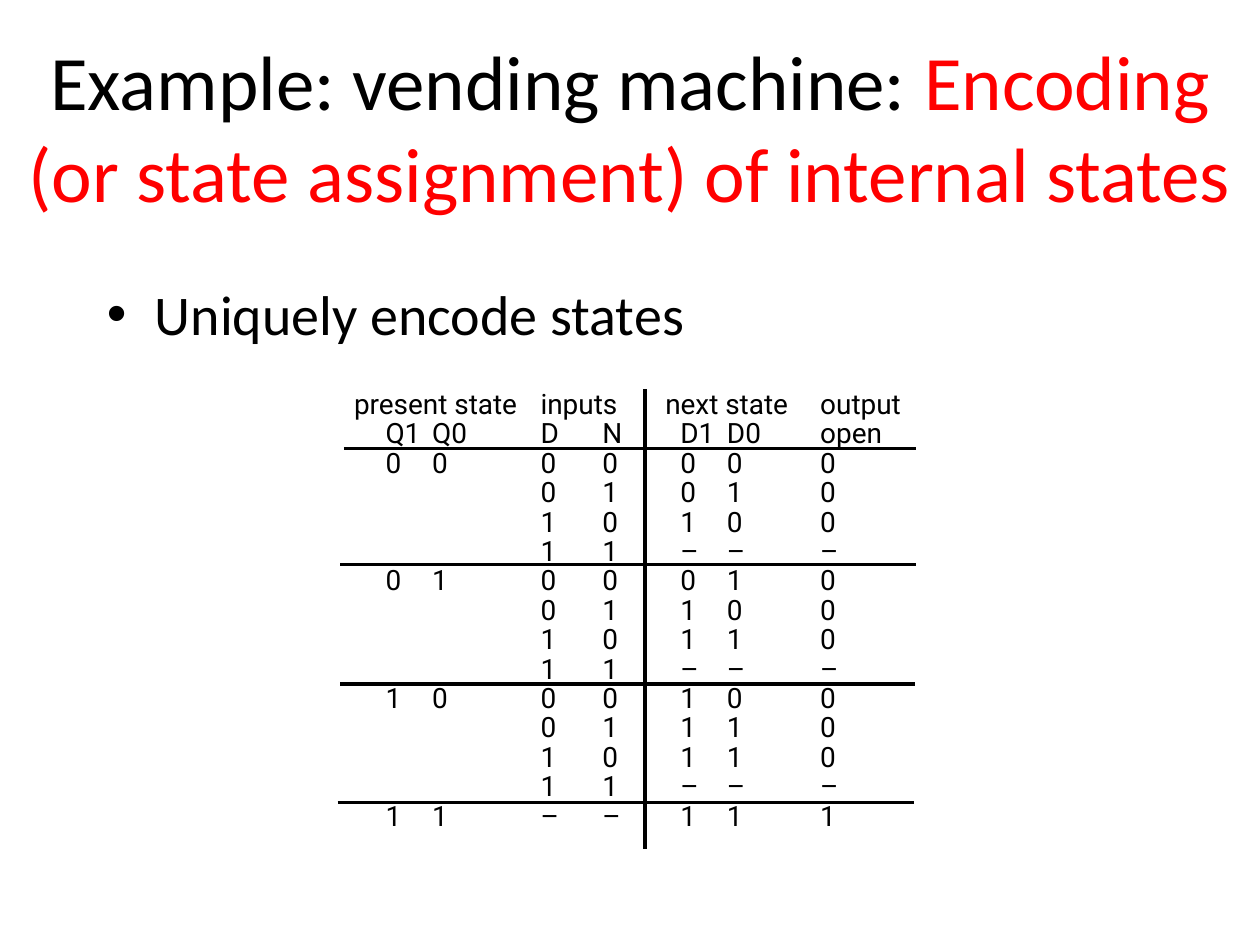
from typing import NamedTuple, Optional, Sequence

from lxml import etree
from pptx import Presentation
from pptx import util as u
from pptx.dml.color import RGBColor
from pptx.enum import shapes, text
from pptx.oxml import ns

PX = 9144  # EMU per px, 100 px to the inch
BLACK = RGBColor(0, 0, 0)
RED = RGBColor(255, 0, 0)

COLUMN_TABS = (25, 62, 148, 197, 247, 259, 296, 370)


class Box(NamedTuple):
    left: int
    top: int
    width: int
    height: int


class Span(NamedTuple):
    words: str
    color: RGBColor = BLACK


class Rule(NamedTuple):
    x1: int
    y1: int
    x2: int
    y2: int


class StateGroup(NamedTuple):
    """A present state and its rows of inputs, next state and output."""
    present: str
    transitions: Sequence[str]


HEADINGS = ["present state\tinputs\tnext state\toutput",
            "\tQ1\tQ0\tD\tN\t\tD1\tD0\topen"]
GROUPS = [
    StateGroup("00", ["00000", "01010", "10100", "11–––"]),
    StateGroup("01", ["00010", "01100", "10110", "11–––"]),
    StateGroup("10", ["00100", "01110", "10110", "11–––"]),
    StateGroup("11", ["––111"]),
]
RULES = [
    Rule(273, 356, 727, 356),
    Rule(270, 448, 727, 448),
    Rule(270, 543, 726, 543),
    Rule(268, 637, 725, 637),
    Rule(512, 309, 512, 674),
]


def px(length: int) -> u.Emu:
    return u.Emu(length * PX)


def table_lines() -> list[str]:
    lines = list(HEADINGS)
    for group in GROUPS:
        for index, values in enumerate(group.transitions):
            present = group.present if index == 0 else ("", "")
            cells = ["", *present, *values[:2], "", *values[2:]]
            lines.append("\t".join(cells))
    return lines


def write(slide, box: Box, paragraphs: Sequence[Sequence[Span]], *,
          font: str = "Calibri", size: int = 32,
          align=text.PP_ALIGN.LEFT, anchor=text.MSO_ANCHOR.TOP,
          insets: tuple[int, int] = (10, 5), leading: Optional[float] = None,
          bullet: str = "", indent: int = 0, tabs: Sequence[int] = ()) -> None:
    frame = slide.shapes.add_textbox(*map(px, box)).text_frame
    frame.word_wrap = True
    frame.vertical_anchor = anchor
    frame.margin_left = frame.margin_right = px(insets[0])
    frame.margin_top = frame.margin_bottom = px(insets[1])
    for index, spans in enumerate(paragraphs):
        paragraph = frame.add_paragraph() if index else frame.paragraphs[0]
        paragraph.alignment = align
        if leading:
            paragraph.line_spacing = u.Pt(leading)
        properties = paragraph._p.get_or_add_pPr()
        if bullet:
            properties.set("marL", str(px(indent)))
            properties.set("indent", str(-px(indent)))
            etree.SubElement(properties, ns.qn("a:buFont"), typeface="Arial")
            etree.SubElement(properties, ns.qn("a:buChar"), char=bullet)
        if tabs:
            stops = etree.SubElement(properties, ns.qn("a:tabLst"))
            for stop in tabs:
                etree.SubElement(stops, ns.qn("a:tab"), pos=str(px(stop)), algn="l")
        for span in spans:
            run = paragraph.add_run()
            run.text = span.words
            run.font.name = font
            run.font.size = u.Pt(size)
            run.font.color.rgb = span.color


def draw_rule(slide, rule: Rule) -> None:
    line = slide.shapes.add_connector(shapes.MSO_CONNECTOR.STRAIGHT, *map(px, rule))
    line.line.color.rgb = BLACK
    line.line.width = u.Pt(2)
    etree.SubElement(line._element.spPr, ns.qn("a:effectLst"))


def main() -> None:
    deck = Presentation()
    deck.slide_width, deck.slide_height = px(1000), px(750)
    slide = deck.slides.add_slide(deck.slide_layouts[6])

    write(slide, Box(279, 307, 447, 414), [[Span(line)] for line in table_lines()],
          font="Roboto", size=16, insets=(2, 3), leading=16.8, tabs=COLUMN_TABS)
    for rule in RULES:
        draw_rule(slide, rule)
    write(slide, Box(0, 0, 1000, 200),
          [[Span("Example: vending machine: "),
            Span("Encoding (or state assignment) of internal states", RED)]],
          size=44, align=text.PP_ALIGN.CENTER, anchor=text.MSO_ANCHOR.MIDDLE)
    write(slide, Box(75, 217, 850, 450), [[Span("Uniquely encode states")]],
          bullet="•", indent=38)
    deck.save("out.pptx")


if __name__ == "__main__":
    main()
